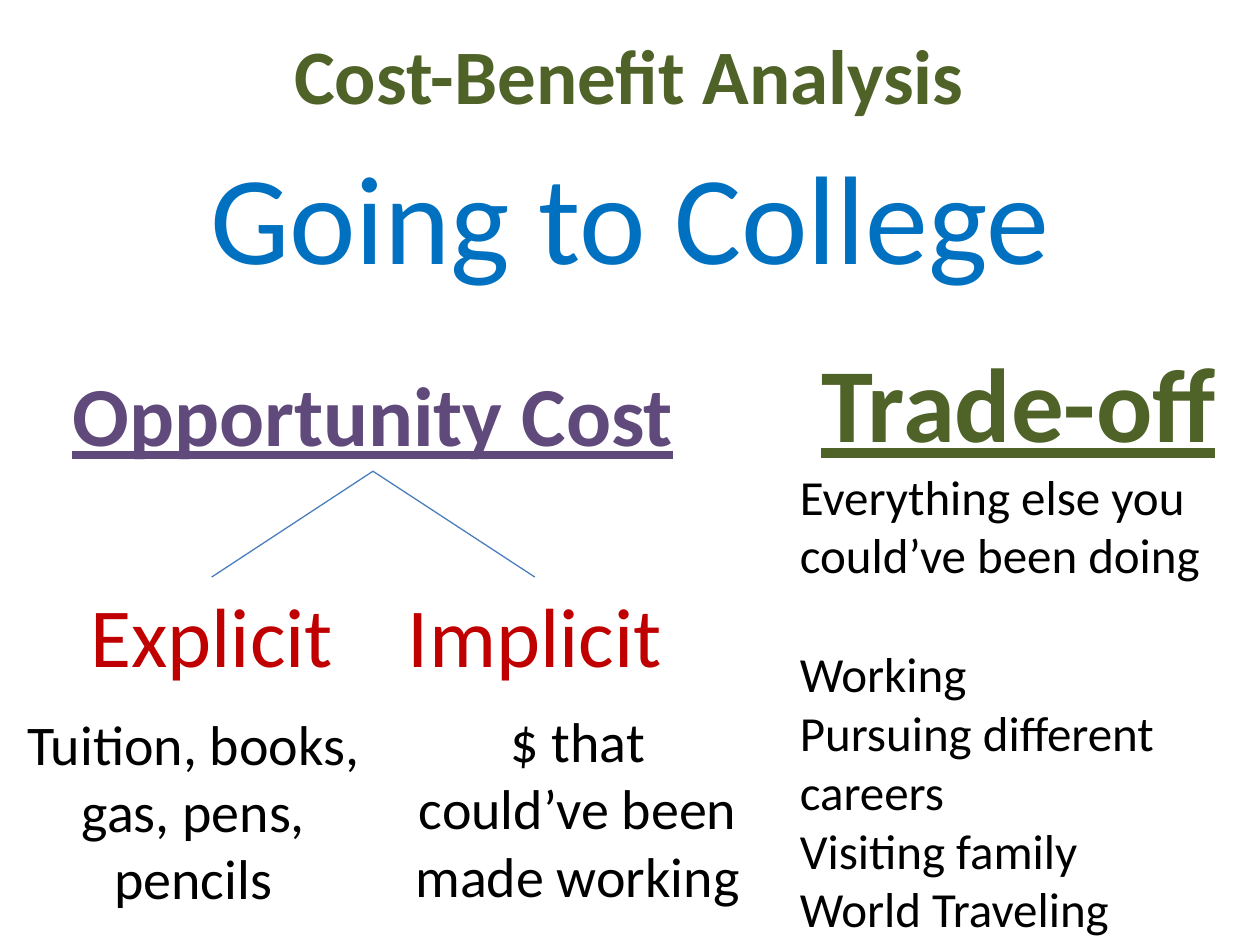
from dataclasses import dataclass

from lxml import etree
from pptx import Presentation
from pptx.dml.color import RGBColor
from pptx.enum import shapes, text
from pptx.oxml.ns import qn
from pptx.util import Inches, Pt


@dataclass(frozen=True)
class Theme:
    font: str = "Calibri"
    green: str = "4F6228"
    blue: str = "0070C0"
    purple: str = "604A7B"
    red: str = "C00000"
    black: str = "000000"
    branch: str = "4B7EBC"
    title: int = 44
    topic: int = 72
    heading: int = 48
    tradeoff: int = 60
    example: int = 32
    body: int = 28
    branch_width: float = 0.75


THEME = Theme()
CENTER = text.PP_ALIGN.CENTER
LEFT = text.PP_ALIGN.LEFT
BOTTOM_SITE, TOP_SITE = 2, 0


@dataclass(frozen=True)
class Label:
    lines: tuple[str, ...]
    left: float
    top: float
    width: float
    height: float
    size: int
    color: str
    bold: bool = False
    underline: bool = False
    align: text.PP_ALIGN = CENTER


TITLE = Label(("Cost-Benefit Analysis",), 1.83, 0.17, 6.33, 0.84,
              THEME.title, THEME.green, bold=True)
TOPIC = Label(("Going to College",), 1.25, 1.05, 7.5, 1.31, THEME.topic, THEME.blue)
OPPORTUNITY = Label(("Opportunity Cost",), 0.17, 2.83, 5.58, 0.91,
                    THEME.heading, THEME.purple, bold=True, underline=True)
COST_KINDS = (
    Label(("Explicit",), 0.46, 4.58, 2.44, 0.91, THEME.heading, THEME.red),
    Label(("Implicit",), 2.92, 4.58, 2.65, 0.91, THEME.heading, THEME.red),
)
EXAMPLES = (
    Label(("Tuition, books, gas, pens, pencils",), 0.11, 5.58, 2.85, 1.72,
          THEME.example, THEME.black),
    Label(("$ that could’ve been made working",), 3.19, 5.56, 2.79, 1.72,
          THEME.example, THEME.black),
)
TRADEOFF = Label(("Trade-off",), 6.42, 2.63, 3.42, 1.11, THEME.tradeoff,
                 THEME.green, bold=True, underline=True, align=LEFT)
ALTERNATIVES = Label(
    ("Everything else you could’ve been doing", "Working",
     "Pursuing different careers", "Visiting family", "World Traveling"),
    6.25, 3.65, 3.83, 3.87, THEME.body, THEME.black, align=LEFT)


def add_label(slide, label: Label):
    shape = slide.shapes.add_textbox(Inches(label.left), Inches(label.top),
                                     Inches(label.width), Inches(label.height))
    frame = shape.text_frame
    frame.word_wrap = True
    frame.auto_size = text.MSO_AUTO_SIZE.SHAPE_TO_FIT_TEXT
    for index, line in enumerate(label.lines):
        paragraph = frame.paragraphs[0] if index == 0 else frame.add_paragraph()
        paragraph.alignment = label.align
        run = paragraph.add_run()
        run.text = line
        run.font.name = THEME.font
        run.font.size = Pt(label.size)
        run.font.bold = label.bold
        run.font.underline = label.underline
        run.font.color.rgb = RGBColor.from_string(label.color)
    return shape


def add_branch(slide, parent, child) -> None:
    """Join the bottom of the parent to the top of the child."""
    connector = slide.shapes.add_connector(shapes.MSO_CONNECTOR.STRAIGHT, 0, 0, 0, 0)
    connector.begin_connect(child, TOP_SITE)
    connector.end_connect(parent, BOTTOM_SITE)
    connector.line.color.rgb = RGBColor.from_string(THEME.branch)
    connector.line.width = Pt(THEME.branch_width)
    etree.SubElement(connector._element.spPr, qn("a:effectLst"))


def main() -> None:
    presentation = Presentation()
    presentation.slide_width = Inches(10)
    presentation.slide_height = Inches(7.5)
    slide = presentation.slides.add_slide(presentation.slide_layouts[6])

    add_label(slide, TITLE)
    add_label(slide, TOPIC)
    opportunity = add_label(slide, OPPORTUNITY)
    kinds = [add_label(slide, kind) for kind in COST_KINDS]
    for kind in kinds:
        add_branch(slide, opportunity, kind)
    for example in EXAMPLES:
        add_label(slide, example)
    add_label(slide, TRADEOFF)
    alternatives = add_label(slide, ALTERNATIVES)
    # One line of space sets the list apart from its introduction.
    alternatives.text_frame.paragraphs[1].space_before = Pt(THEME.body * 1.22)

    presentation.save("out.pptx")


if __name__ == "__main__":
    main()
